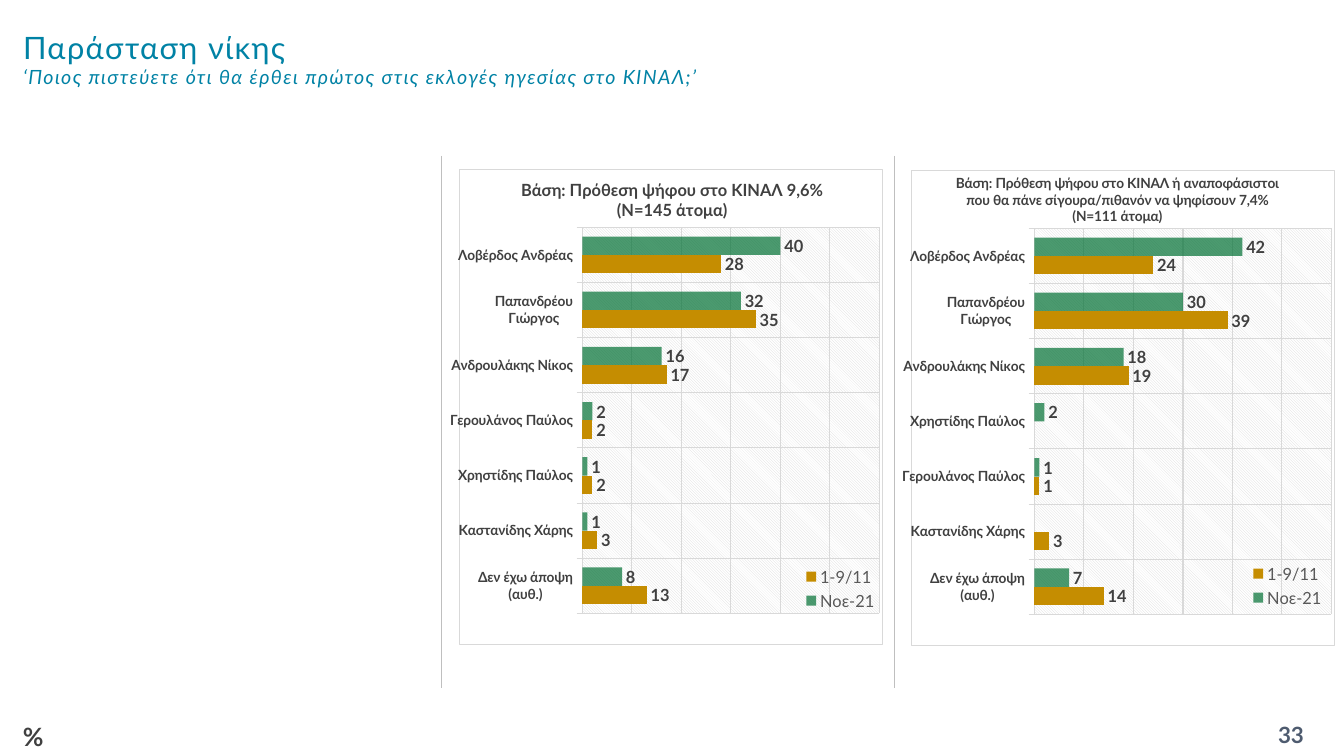
from lxml.etree import SubElement
from pptx import Presentation
from pptx.chart.data import CategoryChartData
from pptx.dml.color import RGBColor
from pptx.enum.chart import XL_CHART_TYPE, XL_LABEL_POSITION, XL_LEGEND_POSITION, XL_TICK_MARK
from pptx.enum.shapes import MSO_CONNECTOR
from pptx.enum.text import MSO_ANCHOR, PP_ALIGN
from pptx.oxml import parse_xml
from pptx.oxml.ns import nsdecls, qn
from pptx.util import Emu, Pt

FONT = "Lato"
TEAL = RGBColor(0x00, 0x82, 0xA5)
SLATE = RGBColor(0x4E, 0x5B, 0x6F)
DARK = RGBColor(0x40, 0x40, 0x40)
GRAY = RGBColor(0x59, 0x59, 0x59)
GRID = RGBColor(0xD9, 0xD9, 0xD9)
DIVIDER = RGBColor(0xBF, 0xBF, 0xBF)
GREEN = RGBColor(0x00, 0x70, 0x33)
GOLD = RGBColor(0xC5, 0x8D, 0x01)
CHART_WIDTH, CHART_HEIGHT = 433, 476


def px(*lengths):
    return [Emu(round(length * 12192000 / 1344)) for length in lengths]


def set_layout(element, index, **lengths):
    previous = element.find(qn("c:layout"))
    if previous is not None:
        element.remove(previous)
    layout = parse_xml(f"<c:layout {nsdecls('c')}/>")
    manual = SubElement(layout, qn("c:manualLayout"))
    if index == 0:
        SubElement(manual, qn("c:layoutTarget")).set("val", "inner")
    for mode in ("xMode", "yMode"):
        SubElement(manual, qn(f"c:{mode}")).set("val", "edge")
    for name, length in lengths.items():
        whole = CHART_WIDTH if name in "xw" else CHART_HEIGHT
        SubElement(manual, qn(f"c:{name}")).set("val", str(length / whole))
    element.insert(index, layout)


deck = Presentation()
deck.slide_width, deck.slide_height = px(1344, 756)
page = deck.slides.add_slide(deck.slide_layouts[5])

title = page.shapes.title
title.left, title.top, title.width, title.height = px(13, -1, 990, 119)
title.text_frame.vertical_anchor = MSO_ANCHOR.MIDDLE
title.text_frame.word_wrap = True
para = title.text_frame.paragraphs[0]
para.alignment = PP_ALIGN.LEFT
heading = para.add_run()
heading.text = "Παράσταση νίκης"
para.add_line_break()
question = para.add_run()
question.text = "‘Ποιος πιστεύετε ότι θα έρθει πρώτος στις εκλογές ηγεσίας στο ΚΙΝΑΛ;’"
question.font.italic = True
for span, size in ((heading, 22), (question, 14)):
    span.font.name = FONT
    span.font.size = Pt(size)
    span.font.color.rgb = TEAL
    span.font._element.set("spc", "100")

LOVERDOS, PAPANDREOU, ANDROULAKIS = "Λοβέρδος Ανδρέας", "Παπανδρέου Γιώργος", "Ανδρουλάκης Νίκος"
GEROULANOS, CHRISTIDIS, KASTANIDIS = "Γερουλάνος Παύλος", "Χρηστίδης Παύλος", "Καστανίδης Χάρης"
NO_OPINION = "Δεν έχω άποψη (αυθ.)"
polls = [
    (450, 169, "Βάση: Πρόθεση ψήφου στο ΚΙΝΑΛ 9,6%\n(Ν=145 άτομα)", 12, (60, 5), (349, 394),
     [LOVERDOS, PAPANDREOU, ANDROULAKIS, GEROULANOS, CHRISTIDIS, KASTANIDIS, NO_OPINION],
     (40, 32, 16, 2, 1, 1, 8), (28, 35, 17, 2, 2, 3, 13)),
    (902, 170, "Βάση: Πρόθεση ψήφου στο ΚΙΝΑΛ ή αναποφάσιστοι "
     "που θα πάνε σίγουρα/πιθανόν να ψηφίσουν 7,4% (Ν=111 άτομα)", 10, (43, 0), (344, 390),
     [LOVERDOS, PAPANDREOU, ANDROULAKIS, CHRISTIDIS, GEROULANOS, KASTANIDIS, NO_OPINION],
     (42, 30, 18, 2, 1, None, 7), (24, 39, 19, None, 1, 3, 14)),
]
for left, top, caption, caption_size, caption_at, legend_at, names, november, early in polls:
    data = CategoryChartData(number_format="0")
    data.categories = names
    data.add_series("Νοε-21", november)
    data.add_series("1-9/11", early)
    chart = page.shapes.add_chart(
        XL_CHART_TYPE.BAR_CLUSTERED, *px(left, top, CHART_WIDTH, CHART_HEIGHT), data).chart
    chart.font.name = FONT
    chart.font.size = Pt(10)

    chart.has_title = True
    chart.chart_title.text_frame.text = caption
    for para in chart.chart_title.text_frame.paragraphs:
        para.font.name = FONT
        para.font.size = Pt(caption_size)
        para.font.bold = True
        para.font.color.rgb = DARK
    caption_element = chart.chart_title._element
    set_layout(caption_element, 1, x=caption_at[0], y=caption_at[1])
    caption_element.find(qn("c:overlay")).set("val", "1")

    chart.has_legend = True
    chart.legend.position = XL_LEGEND_POSITION.RIGHT
    chart.legend.include_in_layout = True
    chart.legend.font.name = FONT
    chart.legend.font.size = Pt(12)
    chart.legend.font.color.rgb = GRAY
    set_layout(chart.legend._element, 1, x=legend_at[0], y=legend_at[1], w=82, h=52)

    candidates, percent = chart.category_axis, chart.value_axis
    candidates.reverse_order = True
    candidates.major_tick_mark = XL_TICK_MARK.OUTSIDE
    candidates.tick_labels.font.name = FONT
    candidates.tick_labels.font.size = Pt(10)
    candidates.tick_labels.font.bold = True
    candidates.tick_labels.font.color.rgb = DARK
    candidates.has_major_gridlines = percent.has_major_gridlines = True
    percent.minimum_scale, percent.maximum_scale, percent.major_unit = 0, 60, 10
    percent.visible = False
    for rule in (candidates, candidates.major_gridlines, percent.major_gridlines):
        rule.format.line.color.rgb = GRID
        rule.format.line.width = Pt(0.75)

    plot = chart.plots[0]
    plot.gap_width = 100
    plot.overlap = 0
    plot.vary_by_categories = False
    for series, color in zip(plot.series, (GREEN, GOLD)):
        series.format.fill.solid()
        series.format.fill.fore_color.rgb = color
        labels = series.data_labels
        labels.show_value = True
        labels.number_format = "0"
        labels.number_format_is_linked = False
        labels.position = XL_LABEL_POSITION.OUTSIDE_END
        labels.font.name = FONT
        labels.font.size = Pt(12)
        labels.font.bold = True
        labels.font.color.rgb = DARK
    green_fill = plot.series[0]._element.find(qn("c:spPr")).find(".//" + qn("a:srgbClr"))
    SubElement(green_fill, qn("a:alpha")).set("val", "70000")

    frame = chart.element.find(qn("c:chart"))
    plot_area = frame.find(qn("c:plotArea"))
    set_layout(plot_area, 0, x=126, y=58, w=304, h=387)
    plot_area.append(parse_xml(
        f'<c:spPr {nsdecls("c", "a")}><a:pattFill prst="ltDnDiag">'
        f'<a:fgClr><a:srgbClr val="{GRID}"/></a:fgClr>'
        '<a:bgClr><a:srgbClr val="FFFFFF"/></a:bgClr></a:pattFill><a:ln><a:noFill/></a:ln></c:spPr>'))
    frame.addnext(parse_xml(
        f'<c:spPr {nsdecls("c", "a")}><a:solidFill><a:srgbClr val="FFFFFF"/></a:solidFill>'
        f'<a:ln w="9525"><a:solidFill><a:srgbClr val="{GRID}"/></a:solidFill></a:ln></c:spPr>'))

for x in (442, 895):
    divider = page.shapes.add_connector(MSO_CONNECTOR.STRAIGHT, *px(x, 156, x, 688))
    divider.line.color.rgb = DIVIDER
    divider.line.width = Pt(0.75)
    SubElement(divider._element.spPr, qn("a:effectLst"))

for left, width, text, size, color, alignment in (
    (1238, 106, "33", 16, SLATE, PP_ALIGN.CENTER),
    (13, 72, "%", 18, DARK, PP_ALIGN.LEFT),
):
    box = page.shapes.add_textbox(*px(left, 716, width, 40))
    box.text_frame.word_wrap = True
    para = box.text_frame.paragraphs[0]
    para.text = text
    para.alignment = alignment
    para.font.name = FONT
    para.font.size = Pt(size)
    para.font.bold = True
    para.font.color.rgb = color

deck.save("out.pptx")
